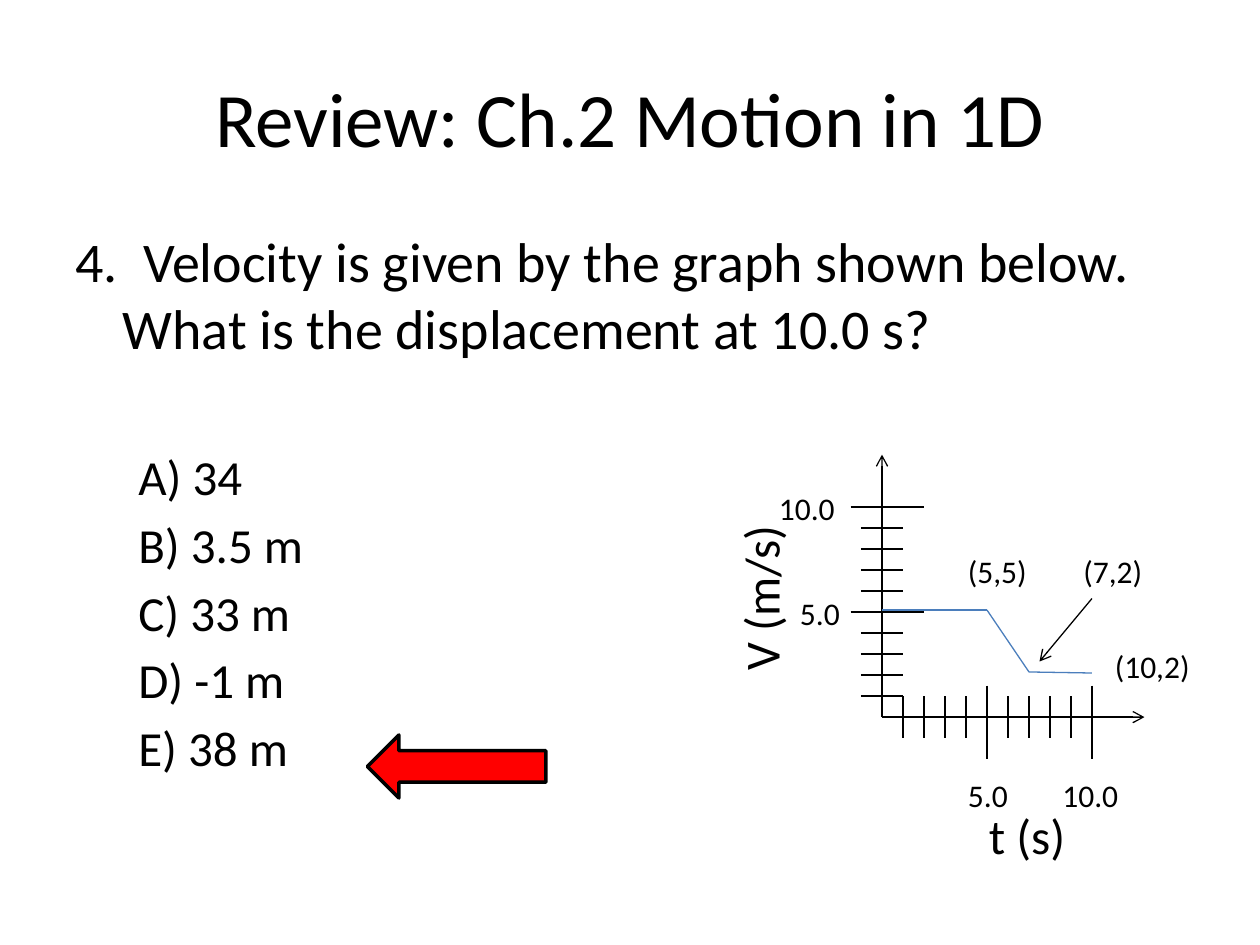
from itertools import pairwise

from pptx import Presentation
from pptx.dml.color import RGBColor
from pptx.enum.shapes import MSO_CONNECTOR, MSO_SHAPE
from pptx.enum.text import MSO_ANCHOR, MSO_AUTO_SIZE, PP_ALIGN
from pptx.oxml.ns import qn
from pptx.util import Pt
from lxml.etree import SubElement

SCALE = 7620
FONT = "Calibri"
BLACK, RED, BLUE = "000000", "FF0000", "4B7EBC"
LABEL = {"word_wrap": False, "auto_size": MSO_AUTO_SIZE.SHAPE_TO_FIT_TEXT}


def px(*lengths):
    return [length * SCALE for length in lengths]


def color(value):
    return RGBColor.from_string(value)


def apply(target, values):
    for name, value in values.items():
        setattr(target, name, value)


def add_run(paragraph, text, size):
    run = paragraph.add_run()
    run.text = text
    apply(run.font, {"name": FONT, "size": Pt(size)})
    run.font.color.rgb = color(BLACK)


def add_text(slide, box, text, size, frame=LABEL, rotation=0, alignment=PP_ALIGN.LEFT):
    shape = slide.shapes.add_textbox(*px(*box))
    shape.rotation = rotation
    apply(shape.text_frame, frame)
    paragraph = shape.text_frame.paragraphs[0]
    paragraph.alignment = alignment
    add_run(paragraph, text, size)


def add_line(slide, start, end, line_color=BLACK, arrow=False):
    connector = slide.shapes.add_connector(MSO_CONNECTOR.STRAIGHT, *px(*start, *end))
    connector.line.color.rgb = color(line_color)
    connector.line.width = Pt(0.75)
    properties = connector._element.spPr
    if arrow:
        SubElement(properties.find(qn("a:ln")), qn("a:tailEnd"), type="arrow")
    SubElement(properties, qn("a:effectLst"))


def add_title(slide, box):
    frame = {"word_wrap": True, "vertical_anchor": MSO_ANCHOR.MIDDLE}
    add_text(slide, box, "Review: Ch.2 Motion in 1D", 44, frame, alignment=PP_ALIGN.CENTER)


def add_question(slide, box):
    frame = slide.shapes.add_textbox(*px(*box)).text_frame
    frame.word_wrap = True
    question = "4.  Velocity is given by the graph shown below. What is the displacement at 10.0 s?"
    answers = ["A) 34", "B) 3.5 m", "C) 33 m", "D) -1 m", "E) 38 m"]
    rows = [(question, 32, 0, 45, 45), (answers[0], 28, 49, 97, 37)]
    rows += [(answer, 28, 5, 97, 37) for answer in answers[1:]]
    for index, (text, size, space, margin, hanging) in enumerate(rows):
        paragraph = frame.add_paragraph() if index else frame.paragraphs[0]
        paragraph.space_before = Pt(space)
        properties = paragraph._p.get_or_add_pPr()
        for name, length in {"marL": margin, "indent": -hanging}.items():
            properties.set(name, str(length * SCALE))
        add_run(paragraph, text, size)


def add_answer_arrow(slide, box):
    arrow = slide.shapes.add_shape(MSO_SHAPE.LEFT_ARROW, *px(*box))
    arrow.shadow.inherit = False
    arrow.fill.solid()
    arrow.fill.fore_color.rgb = color(RED)
    arrow.line.color.rgb = color(BLACK)
    arrow.line.width = Pt(2)


def add_velocity_graph(slide, box):
    left, top, width, height = box
    origin_x, origin_y = left + 198, top + 250

    def at(x, y):
        return origin_x + x, origin_y + y

    step = 20
    for number in range(1, 11):
        offset = number * step
        spans = [] if number == 5 else [(-20, 20)]
        if number % 5 == 0:
            spans.append((-30, 40))
        for low, high in spans:
            add_line(slide, at(low, -offset), at(high, -offset))
            add_line(slide, at(offset, low), at(offset, high))
    add_line(slide, at(0, 0), (origin_x, top), arrow=True)
    add_line(slide, at(0, 0), at(250, 0), arrow=True)

    points = [(0, -102), (100, -102), (140, -43), (200, -42)]
    for start, end in pairwise(points):
        add_line(slide, at(*start), at(*end), BLUE)
    add_line(slide, at(200, -113), at(150, -53), arrow=True)

    labels = [
        ("5.0", -90, -123, 62), ("10.0", -110, -223, 78),
        ("5.0", 70, 50, 62), ("10.0", 160, 50, 78),
        ("(5,5)", 70, -163, 82), ("(7,2)", 180, -163, 82), ("(10,2)", 210, -73, 96),
    ]
    for text, x, y, label_width in labels:
        add_text(slide, (*at(x, y), label_width, 48), text, 18)
    add_text(slide, (left, top + 101, 164, 68), "V (m/s)", 28, rotation=270)
    add_text(slide, (*at(90, 78), 98, 68), "t (s)", 28)


def main():
    presentation = Presentation()
    size = dict(zip(("slide_width", "slide_height"), px(1200, 900)))
    apply(presentation, size)
    slide = presentation.slides.add_slide(presentation.slide_layouts[6])
    add_title(slide, (60, 36, 1080, 150))
    add_question(slide, (60, 210, 1080, 594))
    add_answer_arrow(slide, (350, 700, 170, 60))
    add_velocity_graph(slide, (642, 433, 504, 396))
    presentation.save("out.pptx")


if __name__ == "__main__":
    main()
